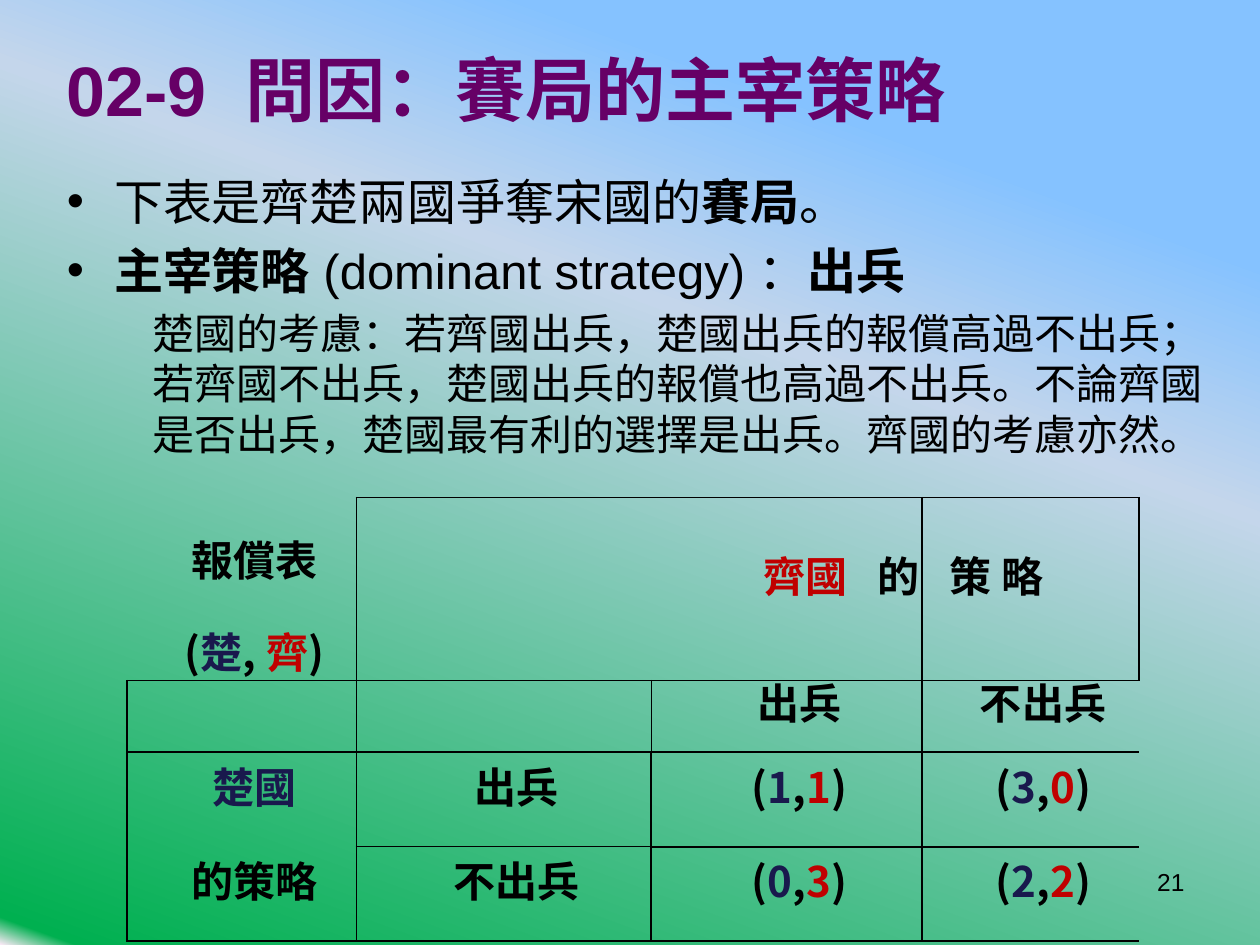
import dataclasses
import pptx
import pptx.dml.color
import pptx.enum.text
import pptx.oxml
import pptx.oxml.ns
import pptx.util

Pt = pptx.util.Pt
ALIGN = pptx.enum.text.PP_ALIGN
MID = pptx.enum.text.MSO_ANCHOR.MIDDLE


@dataclasses.dataclass(frozen=True)
class Theme:
    title: str = "660066"
    ink: str = "000000"
    chu: str = "19194D"
    qi: str = "C00000"
    stops: tuple = ((19, "85C2FF"), (37, "C4D6EB"), (98, "00B050"), (100, "FFEBFA"))
    angle: int = 110
    head: int = 40
    lead: int = 28
    text: int = 24
    page: int = 14
    sans: str = "Arial"
    cjk: str = "Noto Sans CJK TC"
    thin: float = 1
    thick: float = 1.5


T = Theme()
NO_STYLE = "{2D5ABB26-0587-4C30-8999-92F81FD0307C}"


def node(tag, parent, **attrs):
    item = pptx.oxml.parse_xml(f"<a:{tag} {pptx.oxml.ns.nsdecls('a')}/>")
    for key, value in attrs.items():
        item.set(key, str(value))
    parent.append(item)
    return item


def write(para, text, size=T.text, font=T.sans, color=T.ink, bold=False):
    run = para.add_run()
    run.text = text
    run.font.size = Pt(size)
    run.font.bold = bold
    run.font.color.rgb = pptx.dml.color.RGBColor.from_string(color)
    run.font.name = font
    node("ea", run.font._element, typeface=font)
    return run


def place(shape, box):
    shape.left, shape.top, shape.width, shape.height = map(Pt, box)
    frame = shape.text_frame
    frame.word_wrap = True
    frame.auto_size = pptx.enum.text.MSO_AUTO_SIZE.NONE
    return frame


def indent(para, left, first=0):
    props = para._p.get_or_add_pPr()
    props.set("marL", str(Pt(left)))
    props.set("indent", str(Pt(first)))
    return props


def paint(slide):
    """Fill the background with the sloping gradient."""
    fill = slide.background.fill
    fill.gradient()
    grad = slide._element.find(".//" + pptx.oxml.ns.qn("a:gradFill"))
    for part in list(grad):
        grad.remove(part)
    stops = node("gsLst", grad)
    for pos, color in T.stops:
        node("srgbClr", node("gs", stops, pos=pos * 1000), val=color)
    node("lin", grad, ang=T.angle * 60000, scaled=0)


def title(slide, box):
    frame = place(slide.shapes.title, box)
    frame.vertical_anchor = MID
    para = frame.paragraphs[0]
    para.alignment = ALIGN.LEFT
    write(para, "02-9  問因：賽局的主宰策略", size=T.head, color=T.title, bold=True)


def body(slide, box):
    frame = place(slide.placeholders[1], box)
    leads = (
        (("下表是齊楚兩國爭奪宋國的", False), ("賽局", True), ("。", False)),
        (("主宰策略 ", True), ("(dominant strategy) ：", False), ("出兵", True)),
    )
    para = frame.paragraphs[0]
    for lead in leads:
        indent(para, 27, -27)
        for text, bold in lead:
            write(para, text, size=T.lead, bold=bold)
        para = frame.add_paragraph()
    para.level = 1
    node("buNone", indent(para, 49))
    write(para, "楚國的考慮：若齊國出兵，楚國出兵的報償高過不出兵；"
                "若齊國不出兵，楚國出兵的報償也高過不出兵。"
                "不論齊國是否出兵，楚國最有利的選擇是出兵。齊國的考慮亦然。")


def entry(cell, *lines, align=ALIGN.CENTER, lead=Pt(18)):
    """Fill a cell; each line is a list of (text, colour) pairs."""
    frame = cell.text_frame
    for i, line in enumerate(lines):
        para = frame.add_paragraph() if i else frame.paragraphs[0]
        indent(para, 14.4)
        para.alignment = align
        para.line_spacing = lead
        for text, color in line:
            run = write(para, text, font=T.cjk, color=color, bold=True)
            run.font._element.set("spc", "20")


def rules():
    """Map each cell to its sides and their line widths."""
    edges = {}
    boxes = ((0, 1, 0, 4), (1, 0, 3, 0), (1, 1, 1, 1),
             (1, 2, 1, 4), (2, 1, 3, 1), (2, 2, 3, 4))
    for top, left, low, right in boxes:
        for r in range(top, low + 1):
            for c in range(left, right + 1):
                hits = {"L": c == left, "R": c == right, "T": r == top, "B": r == low}
                edges[r, c] = {side: T.thin for side, hit in hits.items() if hit}
    for c in (2, 3, 4):
        edges[1, c]["B"] = edges[2, c]["T"] = T.thick
    for r in (2, 3):
        edges[r, 1]["R"] = edges[r, 2]["L"] = T.thick
    return edges


def payoff(slide, box):
    cols, rows = (131, 168.5, 154.8, 106.6, 17.3), (50.4, 41, 54, 54)
    frame = slide.shapes.add_table(len(rows), len(cols), *map(Pt, box))
    table = frame.table
    table.first_row = table.horz_banding = False
    table._tbl.tblPr.find(pptx.oxml.ns.qn("a:tableStyleId")).text = NO_STYLE
    for col, width in zip(table.columns, cols):
        col.width = Pt(width)
    for row, height in zip(table.rows, rows):
        row.height = Pt(height)

    edges = rules()
    for r in range(len(rows)):
        for c in range(len(cols)):
            cell = table.cell(r, c)
            cell.vertical_anchor = MID
            cell.margin_left = cell.margin_right = Pt(1.4)
            cell.margin_top = cell.margin_bottom = 0
            props = cell._tc.get_or_add_tcPr()
            for side, width in edges.get((r, c), {}).items():
                line = node("ln" + side, props, w=Pt(width))
                node("srgbClr", node("solidFill", line), val=T.ink)
            cell.fill.background()
    table.cell(0, 1).merge(table.cell(0, 2))
    for r in (1, 2, 3):
        table.cell(r, 3).merge(table.cell(r, 4))

    entry(table.cell(0, 0), [("報償表", T.ink)],
          [("(", T.ink), ("楚", T.chu), (", ", T.ink), ("齊", T.qi), (")", T.ink)],
          lead=1.5)
    entry(table.cell(0, 1), [("齊國   ", T.qi), ("的", T.ink)], align=ALIGN.RIGHT)
    entry(table.cell(0, 3), [("策 略", T.ink)], align=ALIGN.LEFT)
    entry(table.cell(2, 0), [("楚國", T.chu)])
    entry(table.cell(3, 0), [("的策略", T.ink)])
    for i, move in enumerate(("出兵", "不出兵")):
        entry(table.cell(1, 2 + i), [(move, T.ink)])
        entry(table.cell(2 + i, 1), [(move, T.ink)])
    for r, pairs in enumerate((("11", "30"), ("03", "22")), 2):
        for c, (chu, qi) in enumerate(pairs, 2):
            entry(table.cell(r, c), [("(", T.ink), (chu, T.chu), (",", T.ink),
                                     (qi, T.qi), (")", T.ink)])


def number(slide, box):
    frame = place(slide.shapes.add_textbox(0, 0, 0, 0), box)
    para = frame.paragraphs[0]
    para.alignment = ALIGN.RIGHT
    write(para, "21", size=T.page)


def main():
    deck = pptx.Presentation()
    deck.slide_width, deck.slide_height = Pt(720), Pt(540)
    slide = deck.slides.add_slide(deck.slide_layouts[1])
    paint(slide)
    title(slide, (31, 10.8, 653.8, 79.2))
    body(slide, (31, 94.3, 669, 198.7))
    payoff(slide, (72.7, 284.4, 578.2, 199.4))
    number(slide, (516.2, 491.8, 167.8, 37.4))
    deck.save("out.pptx")


if __name__ == "__main__":
    main()
